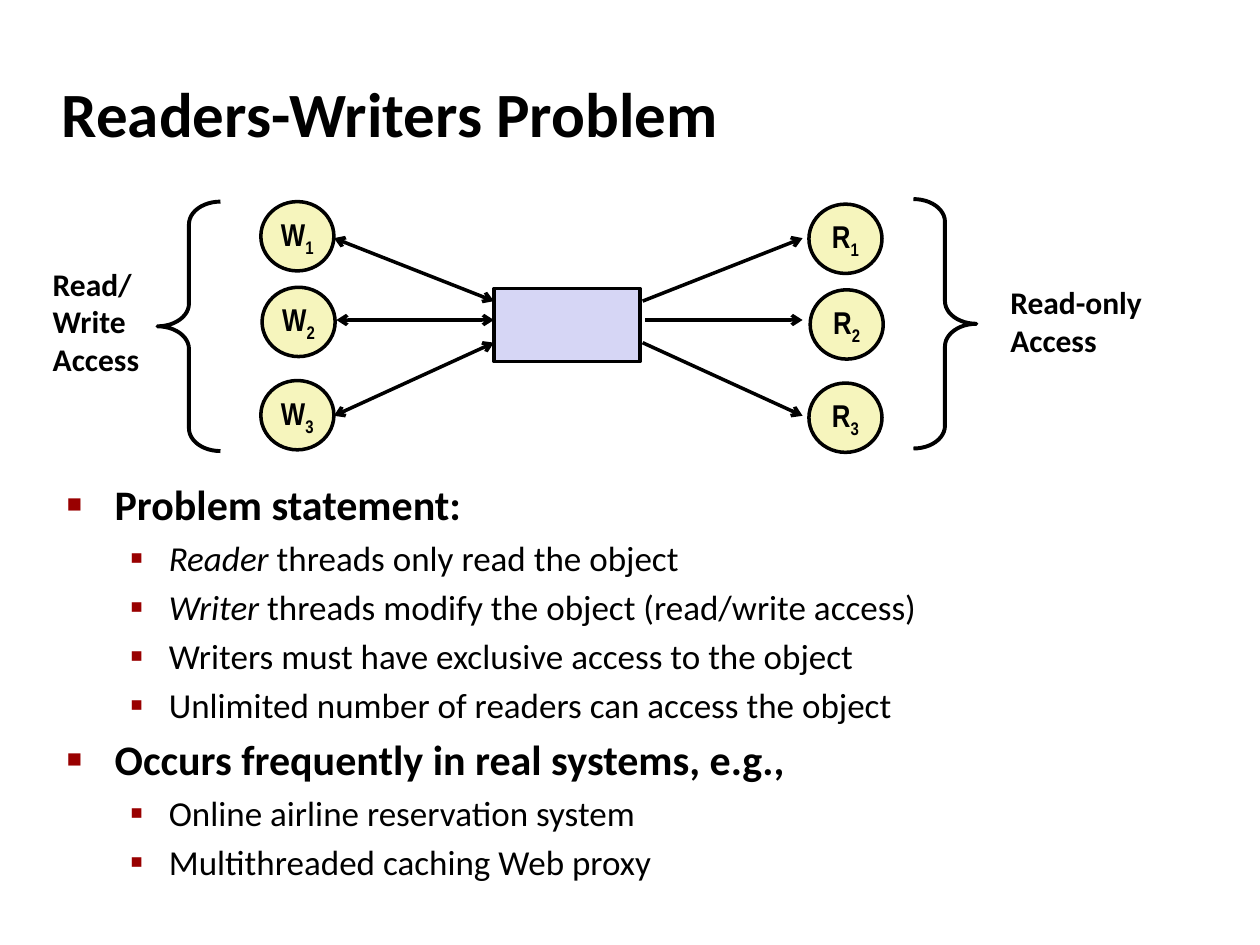
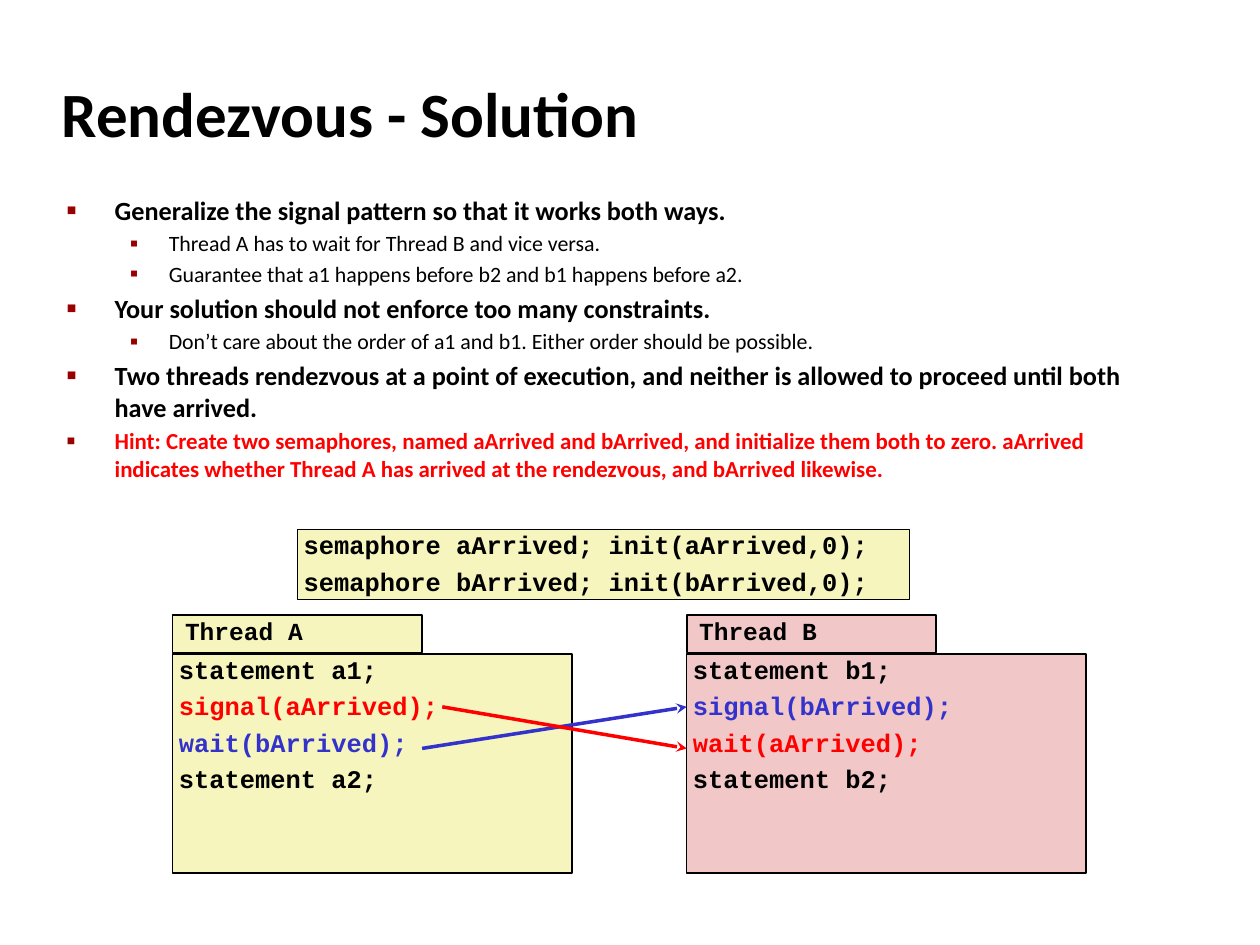
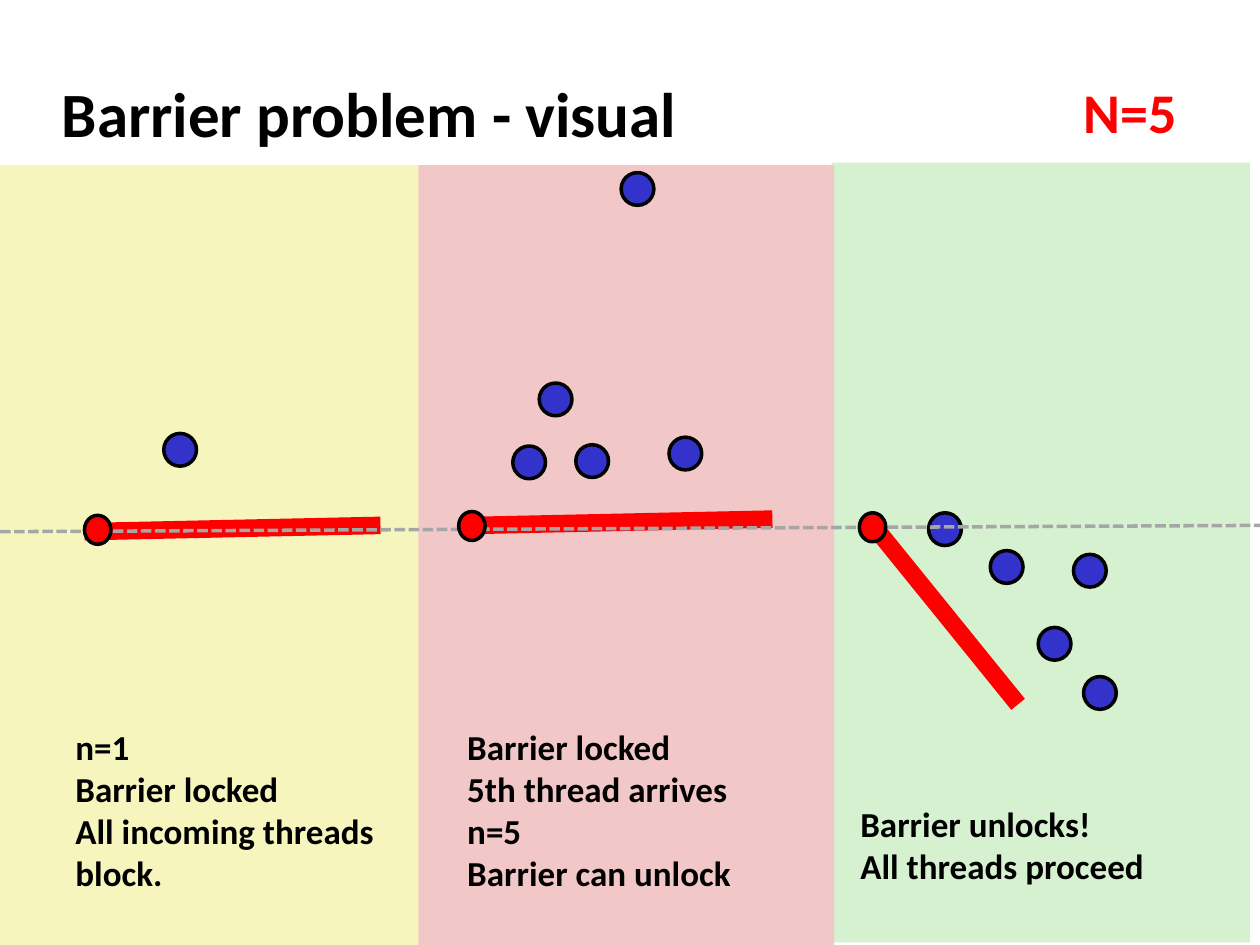
from lxml import etree
from pptx import Presentation
from pptx.dml.color import RGBColor
from pptx.enum.dml import MSO_LINE
from pptx.enum.shapes import MSO_CONNECTOR, MSO_SHAPE
from pptx.enum.text import MSO_ANCHOR, MSO_AUTO_SIZE, PP_ALIGN
from pptx.oxml.ns import qn
from pptx.util import Inches, Pt

RECT, OVAL = MSO_SHAPE.RECTANGLE, MSO_SHAPE.OVAL
LEFT_BRACE, RIGHT_BRACE = MSO_SHAPE.LEFT_BRACE, MSO_SHAPE.RIGHT_BRACE
STRAIGHT, DASH = MSO_CONNECTOR.STRAIGHT, MSO_LINE.SQUARE_DOT
TOP, MIDDLE = MSO_ANCHOR.TOP, MSO_ANCHOR.MIDDLE
LEFT, CENTER = PP_ALIGN.LEFT, PP_ALIGN.CENTER

# Shared style
BLACK = RGBColor(0x00, 0x00, 0x00)
RED = RGBColor(0xFF, 0x00, 0x00)
BLUE = RGBColor(0x33, 0x33, 0xCC)
GRAY = RGBColor(0xA6, 0xA6, 0xA6)
YELLOW = RGBColor(0xF6, 0xF5, 0xBD)
PINK = RGBColor(0xF1, 0xC7, 0xC7)
GREEN = RGBColor(0xD5, 0xF1, 0xCF)
LAVENDER = RGBColor(0xD6, 0xD6, 0xF5)
BULLET_COLOR = "990000"
BODY_FONT, LABEL_FONT, CODE_FONT = "Calibri", "Arial Narrow", "Courier New"
TITLE_BOX = (0.39, 0.48, 8.3, 0.83)
BODY_LEFT, BODY_WIDTH = 0.43, 8.64
# Per outline level: left margin, hanging indent, bullet, bullet size in percent
LEVELS = [(0.38, -0.38, "■", 60), (0.81, -0.31, "▪", 110)]

# Slide 1 content: level, then (text, italic) spans
PROBLEM = [
    (0, [("Problem statement:", False)]),
    (1, [("Reader", True), (" threads only read the object", False)]),
    (1, [("Writer", True), (" threads modify the object (read/write access)", False)]),
    (1, [("Writers must have exclusive access to the object", False)]),
    (1, [("Unlimited number of readers can access the object", False)]),
    (0, [("Occurs frequently in real systems, e.g.,", False)]),
    (1, [("Online airline reservation system", False)]),
    (1, [("Multithreaded caching Web proxy", False)]),
]
# Circle top, arrow height at the circle, arrow height at the shared object
THREAD_ROWS = [(1.6, 1.89, 2.39), (2.28, 2.54, 2.54), (3.02, 3.3, 2.72)]
ACCESS_LABELS = [
    (["Read/", "Write", "Access"], (0.32, 2.05, 0.89, 1.01)),
    (["Read-only", "Access"], (7.92, 2.2, 1.27, 0.71)),
]

# Slide 2 content: level, text, size, colour
RENDEZVOUS = [
    (0, "Generalize the signal pattern so that it works both ways.", 15, BLACK),
    (1, "Thread A has to wait for Thread B and vice versa.", 12.5, BLACK),
    (1, "Guarantee that a1 happens before b2 and b1 happens before a2.", 12.5, BLACK),
    (0, "Your solution should not enforce too many constraints.", 15, BLACK),
    (1, "Don’t care about the order of a1 and b1. Either order should be possible.", 12.5, BLACK),
    (0, "Two threads rendezvous at a point of execution, and neither is allowed "
        "to proceed until both have arrived.", 15, BLACK),
    (0, "Hint: Create two semaphores, named aArrived and bArrived, and initialize "
        "them both to zero. aArrived indicates whether Thread A has arrived at the "
        "rendezvous, and bArrived likewise.", 13.1, RED),
]
SEMAPHORES = ["semaphore aArrived; init(aArrived,0);", "semaphore bArrived; init(bArrived,0);"]
THREADS = [
    ("Thread A", 1.37, YELLOW, ["statement a1;", "signal(aArrived);", "wait(bArrived);", "statement a2;"]),
    ("Thread B", 5.45, PINK, ["statement b1;", "signal(bArrived);", "wait(aArrived);", "statement b2;"]),
]
SIGNALS = [((3.35, 5.94), (5.45, 5.61), BLUE), ((3.51, 5.61), (5.45, 5.94), RED)]

# Slide 3 content
STAGES = [
    {"panel": (0, 1.31), "fill": YELLOW, "pivot": (0.67, 4.09),
     "arm": ((0.67, 4.22), (3.02, 4.17)), "waiting": [(1.3, 3.44)],
     "note": ["n=1", "Barrier locked", "All incoming threads block."],
     "note_box": (0.5, 5.71, 2.68, 1.45)},
    {"panel": (3.3, 1.31), "fill": PINK, "pivot": (3.64, 4.06),
     "arm": ((3.78, 4.17), (6.13, 4.12)),
     "waiting": [(4.07, 3.54), (4.28, 3.04), (4.57, 3.53), (4.93, 1.37), (5.31, 3.47)],
     "note": ["Barrier locked", "5th thread arrives", "n=5", "Barrier can unlock"],
     "note_box": (3.61, 5.71, 2.68, 1.45)},
    {"panel": (6.6, 1.29), "fill": GREEN, "pivot": (6.82, 4.07),
     "arm": ((6.89, 4.12), (8.08, 5.59)),
     "waiting": [(7.37, 4.07), (8.52, 4.4), (7.86, 4.37), (8.24, 4.98), (8.6, 5.37)],
     "note": ["Barrier unlocks!", "All threads proceed"],
     "note_box": (6.73, 6.32, 2.68, 0.77)},
]


def inches(*values):
    return [Inches(value) for value in values]


def place(shape, box):
    shape.left, shape.top, shape.width, shape.height = inches(*box)


def style(font, size, color=BLACK, name=BODY_FONT, bold=True):
    font.size, font.name, font.bold = Pt(size), name, bold
    font.color.rgb = color


def paragraphs(frame, count):
    """Return the frame's paragraphs, grown to the given count."""
    while len(frame.paragraphs) < count:
        frame.add_paragraph()
    return frame.paragraphs


def add_slide(deck, layout_index, title):
    slide = deck.slides.add_slide(deck.slide_layouts[layout_index])
    place(slide.shapes.title, TITLE_BOX)
    frame = slide.shapes.title.text_frame
    frame.text = title
    frame.vertical_anchor = MIDDLE
    frame.auto_size = MSO_AUTO_SIZE.NONE
    frame.paragraphs[0].alignment = LEFT
    style(frame.paragraphs[0].font, 36)
    return slide


def set_bullet(para, level):
    margin, indent, mark, percent = LEVELS[level]
    para.level = level
    props = para._p.get_or_add_pPr()
    props.set("marL", str(Inches(margin)))
    props.set("indent", str(Inches(indent)))
    color = etree.SubElement(props, qn("a:buClr"))
    etree.SubElement(color, qn("a:srgbClr"), val=BULLET_COLOR)
    etree.SubElement(props, qn("a:buSzPct"), val=str(percent * 1000))
    etree.SubElement(props, qn("a:buChar"), char=mark)


def fill_body(slide, top, height, items):
    """Items are (level, spans, size, colour)."""
    body = slide.placeholders[1]
    place(body, (BODY_LEFT, top, BODY_WIDTH, height))
    frame = body.text_frame
    frame.auto_size = MSO_AUTO_SIZE.NONE
    for para, (level, spans, size, color) in zip(paragraphs(frame, len(items)), items):
        set_bullet(para, level)
        style(para.font, size, color, bold=level == 0)
        for text, italic in spans:
            span = para.add_run()
            span.text = text
            if italic:
                span.font.italic = True


def add_shape(slide, kind, box, fill=None, line_width=None):
    shape = slide.shapes.add_shape(kind, *inches(*box))
    shape.shadow.inherit = False
    if fill is None:
        shape.fill.background()
    else:
        shape.fill.solid()
        shape.fill.fore_color.rgb = fill
    if line_width is None:
        shape.line.fill.background()
    else:
        shape.line.color.rgb = BLACK
        shape.line.width = Pt(line_width)
    return shape


def add_line(slide, start, end, color=BLACK, width=2, head=None, tail=None, dash=None):
    line = slide.shapes.add_connector(STRAIGHT, *inches(*start, *end))
    line.line.color.rgb = color
    line.line.width = Pt(width)
    if dash:
        line.line.dash_style = dash
    outline = line.line._get_or_add_ln()
    for tag, arrow in (("a:headEnd", head), ("a:tailEnd", tail)):
        if arrow:
            etree.SubElement(outline, qn(tag), type=arrow)
    etree.SubElement(line._element.spPr, qn("a:effectLst"))


def add_text(slide, lines, box, size, color=BLACK, wrap=False):
    frame = slide.shapes.add_textbox(*inches(*box)).text_frame
    frame.word_wrap = wrap
    for para, text in zip(paragraphs(frame, len(lines)), lines):
        para.text = text
        style(para.font, size, color)


def add_code(slide, lines, box, fill, line_width=0.75, size=14.5, side=0.05, anchor=TOP):
    frame = add_shape(slide, RECT, box, fill, line_width).text_frame
    frame.margin_left = frame.margin_right = Inches(side)
    frame.margin_top = frame.margin_bottom = Inches(0.05)
    frame.vertical_anchor = anchor
    frame.word_wrap = True
    for para, text in zip(paragraphs(frame, len(lines)), lines):
        para.text = text
        para.alignment = LEFT
        para.line_spacing, para.space_before = 0.8, Pt(6.8)
        style(para.font, size, code_color(text), CODE_FONT)


def code_color(text):
    """Matching signal and wait calls share a colour."""
    if "(aArrived);" in text:
        return RED
    return BLUE if "(bArrived);" in text else BLACK


def add_thread_circle(slide, letter, number, left, top):
    circle = add_shape(slide, OVAL, (left, top, 0.58, 0.55), YELLOW, 2)
    frame = circle.text_frame
    frame.word_wrap = False
    frame.vertical_anchor = MIDDLE
    frame.margin_top = frame.margin_bottom = 0
    para = frame.paragraphs[0]
    para.alignment = CENTER
    style(para.font, 18, name=LABEL_FONT)
    para.add_run().text = letter
    subscript = para.add_run()
    subscript.text = str(number)
    subscript._r.get_or_add_rPr().set("baseline", "-25000")


def build_readers_writers(deck):
    slide = add_slide(deck, 1, "Readers-Writers Problem")
    fill_body(slide, 3.75, 3.18,
              [(level, spans, 20 if level else 24, BLACK) for level, spans in PROBLEM])
    # Shared object between writers and readers
    add_shape(slide, RECT, (3.92, 2.29, 1.16, 0.58), LAVENDER, 2)
    for number, (top, outer, inner) in enumerate(THREAD_ROWS, 1):
        nudge = 0.02 if number == 2 else 0
        add_thread_circle(slide, "W", number, 2.07 + nudge / 2, top)
        add_thread_circle(slide, "R", number, 6.42 + nudge / 2, top + 0.02)
        add_line(slide, (2.65 + nudge, outer), (3.92, inner), head="arrow", tail="arrow")
        add_line(slide, (6.37, outer), (5.1 + nudge, inner), head="arrow")
    # Braces and access labels
    for kind, left, top in ((LEFT_BRACE, 1.25, 1.6), (RIGHT_BRACE, 7.25, 1.58)):
        brace = add_shape(slide, kind, (left, top, 0.5, 1.98), line_width=2.25)
        brace.adjustments[0] = 0.36
    for lines, box in ACCESS_LABELS:
        add_text(slide, lines, box, 18)


def build_rendezvous(deck):
    slide = add_slide(deck, 1, "Rendezvous - Solution")
    fill_body(slide, 1.49, 2.64,
              [(level, [(text, False)], size, color) for level, text, size, color in RENDEZVOUS])
    # Code panels with their name tabs
    for name, left, fill, lines in THREADS:
        add_code(slide, lines, (left, 5.19, 3.17, 1.74), fill)
        add_code(slide, [name], (left, 4.88, 1.98, 0.3), fill, 1, 14, 0.1, MIDDLE)
    add_code(slide, SEMAPHORES, (2.36, 4.2, 4.86, 0.56), YELLOW)
    for start, end, color in SIGNALS:
        add_line(slide, start, end, color, tail="stealth")


def build_barrier(deck):
    slide = add_slide(deck, 5, "Barrier problem - visual")
    # Panels from right to left, so that each overlaps the next one
    for stage in reversed(STAGES):
        add_shape(slide, RECT, (*stage["panel"], 3.32, 6.19), stage["fill"])
    for stage in STAGES:
        add_line(slide, *stage["arm"], RED, 10)
        for spot in stage["waiting"]:
            add_shape(slide, OVAL, (*spot, 0.26, 0.26), BLUE, 2)
        add_text(slide, stage["note"], stage["note_box"], 20, wrap=True)
    add_text(slide, ["N=5"], (8.5, 0.57, 0.95, 0.64), 32, RED)
    # Barrier line and the pivots on it
    add_line(slide, (0, 4.22), (10, 4.17), GRAY, dash=DASH)
    for stage in STAGES:
        add_shape(slide, OVAL, (*stage["pivot"], 0.21, 0.23), RED, 2)


def main():
    deck = Presentation()
    deck.slide_width, deck.slide_height = inches(10, 7.5)
    build_readers_writers(deck)
    build_rendezvous(deck)
    build_barrier(deck)
    deck.save("out.pptx")


if __name__ == "__main__":
    main()
